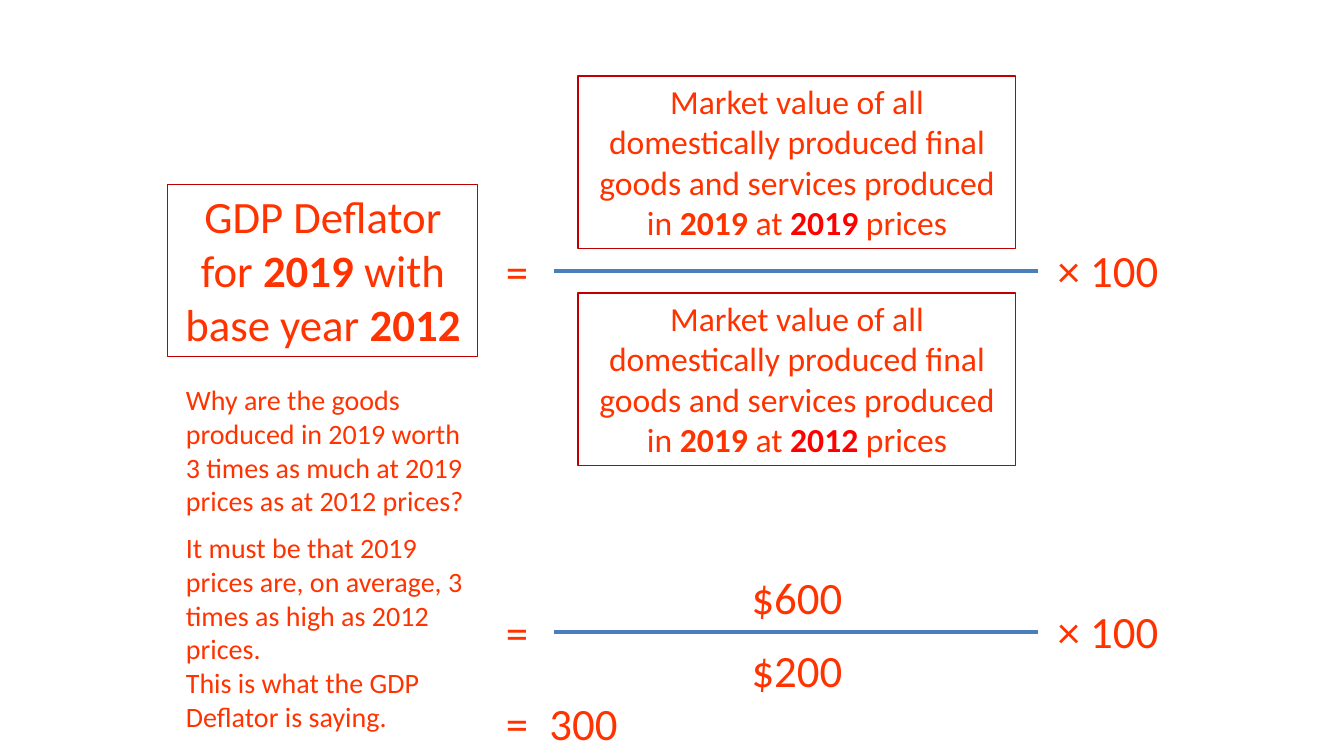
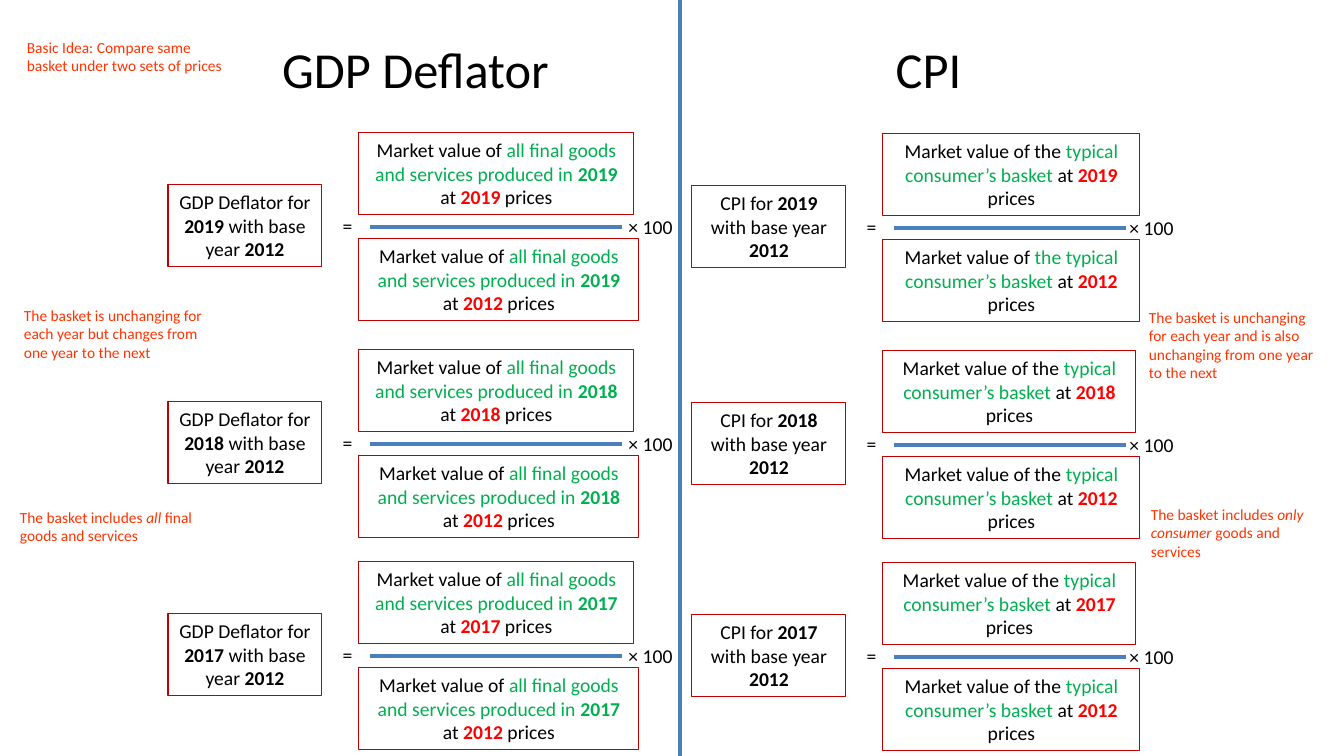
import pptx
import pptx.dml.color
import pptx.enum.shapes
import pptx.enum.text
import pptx.oxml
import pptx.oxml.ns
import pptx.util

RGBColor = pptx.dml.color.RGBColor
ORANGE = RGBColor(0xFF, 0x33, 0x00)
RED = RGBColor(0xFF, 0x00, 0x00)
GREEN = RGBColor(0x00, 0xB0, 0x50)
BLACK = RGBColor(0x00, 0x00, 0x00)
BORDER = RGBColor(0xC0, 0x00, 0x00)
BLUE = RGBColor(0x4B, 0x7E, 0xBC)

FONT = "Calibri"
WIDTH, HEIGHT = 1344, 756
EMU_PER_PX = 914400 / 100.8
TITLE_ONLY, BLANK = 5, 6
BASE_YEAR = "2012"
LEFT = pptx.enum.text.PP_ALIGN.LEFT
CENTER = pptx.enum.text.PP_ALIGN.CENTER


def px(length):
    return pptx.util.Emu(round(length * EMU_PER_PX))


def write(paragraph, text, *, size, color, bold=False, italic=False):
    run = paragraph.add_run()
    run.text = text
    run.font.name = FONT
    run.font.size = pptx.util.Pt(size)
    run.font.color.rgb = color
    run.font.bold = bold
    run.font.italic = italic


def bold(text, **style):
    return text, {"bold": True, **style}


def index_label(name, year):
    return [f"{name} for ", bold(year), " with base year ", bold(BASE_YEAR)]


class Deck:
    def __init__(self):
        self.presentation = pptx.Presentation()
        self.presentation.slide_width = px(WIDTH)
        self.presentation.slide_height = px(HEIGHT)
        self.slide = None
        self.size = None
        self.color = None

    def start_slide(self, layout, size, color):
        layouts = self.presentation.slide_layouts
        self.slide = self.presentation.slides.add_slide(layouts[layout])
        self.size = size
        self.color = color

    def fill_text(self, shape, parts, align, size, color):
        frame = shape.text_frame
        frame.word_wrap = True
        frame.auto_size = pptx.enum.text.MSO_AUTO_SIZE.SHAPE_TO_FIT_TEXT
        frame.vertical_anchor = pptx.enum.text.MSO_ANCHOR.TOP
        paragraph = frame.paragraphs[0]
        paragraph.alignment = align
        for part in [parts] if isinstance(parts, str) else parts:
            text, style = (part, {}) if isinstance(part, str) else part
            base = {"size": size or self.size, "color": color or self.color}
            write(paragraph, text, **{**base, **style})

    def title(self, left, top, width, height, text, size):
        shape = self.slide.shapes.title
        shape.left, shape.top = px(left), px(top)
        shape.width, shape.height = px(width), px(height)
        self.fill_text(shape, text, CENTER, size, None)

    def text(self, left, top, width, height, parts, align=CENTER, size=None, color=None):
        shape = self.slide.shapes.add_textbox(px(left), px(top), px(width), px(height))
        self.fill_text(shape, parts, align, size, color)

    def box(self, left, top, width, height, parts):
        rectangle = pptx.enum.shapes.MSO_SHAPE.RECTANGLE
        shape = self.slide.shapes.add_shape(
            rectangle, px(left), px(top), px(width), px(height))
        shape.shadow.inherit = False
        shape.fill.background()
        shape.line.color.rgb = BORDER
        shape.line.width = pptx.util.Pt(0.75)
        self.fill_text(shape, parts, CENTER, None, None)

    def line(self, start_x, start_y, end_x, end_y):
        straight = pptx.enum.shapes.MSO_CONNECTOR.STRAIGHT
        connector = self.slide.shapes.add_connector(
            straight, px(start_x), px(start_y), px(end_x), px(end_y))
        connector.line.color.rgb = BLUE
        connector.line.width = pptx.util.Pt(3)
        properties = connector._element.spPr
        properties.append(pptx.oxml.parse_xml(
            f"<a:effectLst {pptx.oxml.ns.nsdecls('a')}/>"))


def build_definition(deck):
    deck.start_slide(BLANK, size=32, color=ORANGE)
    deck.box(168, 184, 310, 173, index_label("GDP Deflator", "2019"))
    for bar in (271, 632):
        deck.line(554, bar, 1038, bar)
        deck.text(479, bar - 32, 76, 65, "=")
        deck.text(1040, bar - 33, 136, 65, "× 100")

    deck.size = 24
    for top, price_year in ((76, "2019"), (293, BASE_YEAR)):
        deck.box(578, top, 438, 173, [
            "Market value of all domestically produced final goods and services produced in ",
            bold("2019"), " at ", bold(price_year, color=RED), " prices"])

    deck.size = 32
    deck.text(578, 565, 438, 65, "$600")
    deck.text(578, 638, 438, 65, "$200")
    deck.text(479, 691, 76, 65, "=")
    deck.text(537, 691, 93, 65, "300")

    for top, height, note in (
        (378, 146, "Why are the goods produced in 2019 worth 3 times as much at 2019 prices as at 2012 prices?"),
        (526, 146, "It must be that 2019 prices are, on average, 3 times as high as 2012 prices."),
        (661, 78, "This is what the GDP Deflator is saying."),
    ):
        deck.text(176, top, 302, height, note, align=LEFT, size=20)


def deflator_value(year, price_year, is_numerator):
    return ["Market value of ",
            ("all final goods and services produced in ", {"color": GREEN}),
            bold(f"{year} ", color=GREEN), "at ",
            bold(price_year, color=RED), " prices"]


def cpi_value(year, price_year, is_numerator):
    basket = "typical consumer’s basket"
    if year == "2019" and not is_numerator:
        opening, basket = "Market value of ", f"the {basket}"
    else:
        opening = "Market value of the "
    return [opening, (basket, {"color": GREEN}), " at ",
            bold(price_year, color=RED), " prices"]


def add_formula(deck, name, value, year, left, bar, bar_end, times_left, widths):
    numerator_width, denominator_width = widths
    deck.box(left, bar - 42, 154, 82, index_label(name, year))
    deck.text(left + 157, bar - 18, 45, 35, "=")
    deck.box(left + 191, bar - 94, numerator_width, 82, value(year, year, True))
    deck.line(left + 202, bar, bar_end, bar)
    deck.box(left + 191, bar + 12, denominator_width, 82, value(year, BASE_YEAR, False))
    deck.text(times_left, bar - 17, 69, 34, "× 100")


def build_comparison(deck):
    deck.start_slide(TITLE_ONLY, size=14, color=BLACK)
    deck.line(680, 0, 680, HEIGHT)
    deck.title(210, 33, 411, 72, "GDP Deflator", size=36)
    deck.text(723, 33, 411, 72, "CPI", size=36)

    for year, bar, cpi_width in (("2019", 227, 257), ("2018", 444, 253), ("2017", 656, 253)):
        add_formula(deck, "GDP Deflator", deflator_value, year,
                    168, bar, 622, 616, (275, 280))
        add_formula(deck, "CPI", cpi_value, year,
                    692, bar + 1, 1126, 1117, (cpi_width, 257))

    for left, top, width, height, note in (
        (17, 33, 219, 47, "Basic Idea: Compare same basket under two sets of prices"),
        (14, 301, 219, 66, "The basket is unchanging for each year but changes from one year to the next"),
        (1139, 303, 191, 85, "The basket is unchanging for each year and is also unchanging from one year to the next"),
        (10, 503, 219, 47, ["The basket includes ", ("all", {"italic": True}),
                            " final goods and services"]),
        (1141, 500, 194, 66, ["The basket includes ", ("only consumer ", {"italic": True}),
                              "goods and services"]),
    ):
        deck.text(left, top, width, height, note, align=LEFT, size=11, color=ORANGE)


def main():
    deck = Deck()
    build_definition(deck)
    build_comparison(deck)
    deck.presentation.save("out.pptx")


if __name__ == "__main__":
    main()
